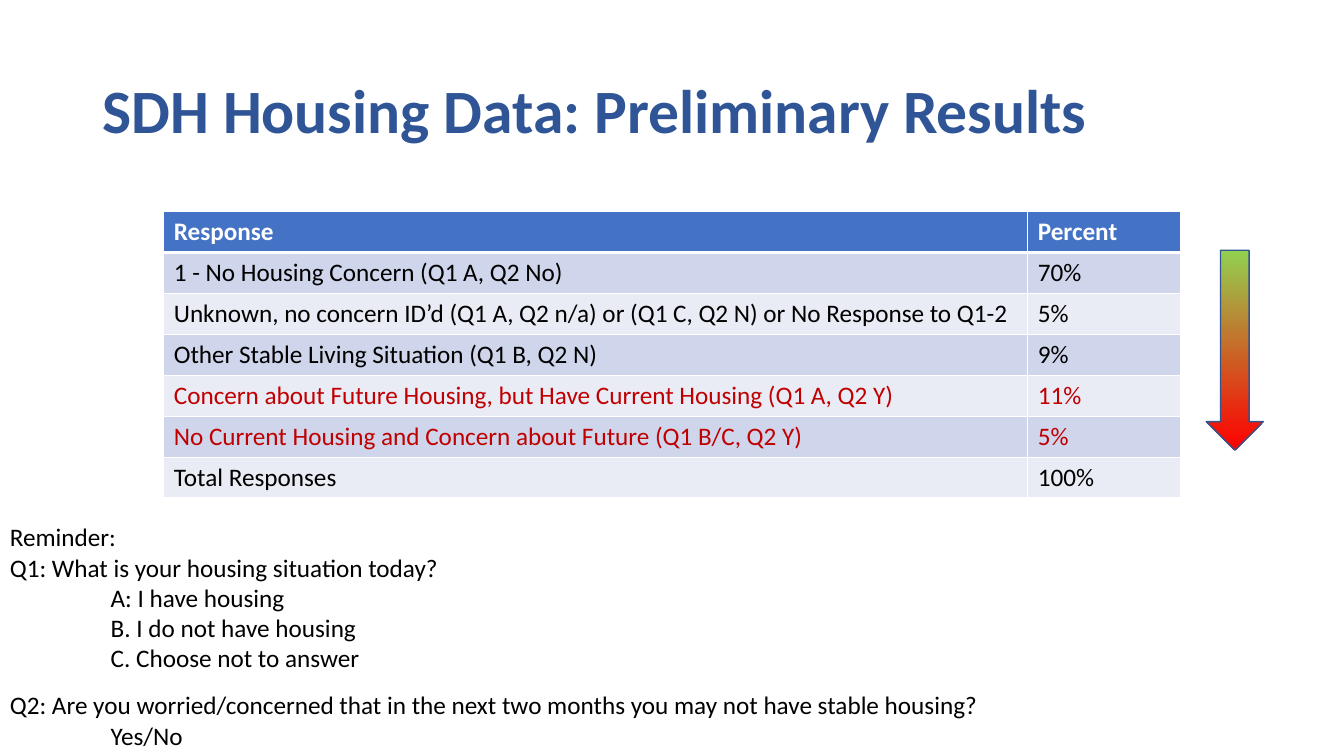
from lxml import etree
from pptx import Presentation
from pptx import util as u
from pptx.dml.color import RGBColor
from pptx.enum import shapes, text
from pptx.oxml import ns

RESPONSES = [
    ("Response", "Percent"),
    ("1 - No Housing Concern (Q1 A, Q2 No)", "70%"),
    ("Unknown, no concern ID’d (Q1 A, Q2 n/a) or (Q1 C, Q2 N) or No Response to Q1-2", "5%"),
    ("Other Stable Living Situation (Q1 B, Q2 N)", "9%"),
    ("Concern about Future Housing, but Have Current Housing (Q1 A, Q2 Y)", "11%"),
    ("No Current Housing and Concern about Future (Q1 B/C, Q2 Y)", "5%"),
    ("Total Responses", "100%"),
]
CONCERN_ROWS = (4, 5)
REMINDER = [
    ("Reminder:", 0, 0),
    ("Q1: What is your housing situation today?", 0, 0),
    ("A: I have housing", 1, 0),
    ("B. I do not have housing", 1, 0),
    ("C. Choose not to answer", 1, 12),
    ("Q2: Are you worried/concerned that in the next two months you may not have stable housing?", 0, 0),
    ("Yes/No", 1, 0),
]


def rgb(code):
    """Turn a hex string into a colour."""
    return RGBColor.from_string(code)


class HousingSlide:
    """Hold the style and the current slide, laid out on a 160 by 90 grid."""

    FONT = "Calibri"
    COLUMNS, ROWS = 160, 90
    INK, WHITE, ALERT = "000000", "FFFFFF", "C00000"
    HEADER, BANDS = "4472C4", ("E9EBF5", "CFD5EA")

    def __init__(self):
        self.deck = Presentation()
        self.deck.slide_width = u.Inches(13.333)
        self.deck.slide_height = u.Inches(7.5)
        self.slide = self.deck.slides.add_slide(self.deck.slide_layouts[5])

    def box(self, column, row, columns, rows):
        """Turn grid units into left, top, width and height."""
        across = self.deck.slide_width / self.COLUMNS
        down = self.deck.slide_height / self.ROWS
        return [int(n * unit) for n, unit in
                ((column, across), (row, down), (columns, across), (rows, down))]

    def assign(self, target, values):
        """Set each attribute from a dict of format values."""
        for key, value in values.items():
            setattr(target, key, value)

    def add_words(self, paragraph, words, color, size=18, bold=False):
        """Put one styled run in a paragraph."""
        run = paragraph.add_run()
        run.text = words
        self.assign(run.font, {"name": self.FONT, "size": u.Pt(size), "bold": bold})
        run.font.color.rgb = rgb(color)

    def title(self, words, *place):
        """Fill and move the title placeholder."""
        heading = self.slide.shapes.title
        self.assign(heading, dict(zip(("left", "top", "width", "height"), self.box(*place))))
        self.assign(heading.text_frame, {"vertical_anchor": text.MSO_ANCHOR.MIDDLE,
                                         "auto_size": text.MSO_AUTO_SIZE.NONE,
                                         "word_wrap": True})
        line = heading.text_frame.paragraphs[0]
        self.assign(line, {"alignment": text.PP_ALIGN.LEFT, "line_spacing": 0.9})
        self.add_words(line, words, "2F5597", 44, True)

    def borders(self, cell, widths):
        """Draw white left, right, top and bottom borders on a cell."""
        properties = cell._tc.get_or_add_tcPr()
        for place, (side, width) in enumerate(zip("LRTB", widths)):
            edge = etree.Element(ns.qn(f"a:ln{side}"), w=str(u.Pt(width)))
            fill = etree.SubElement(edge, ns.qn("a:solidFill"))
            etree.SubElement(fill, ns.qn("a:srgbClr"), val=self.WHITE)
            properties.insert(place, edge)

    def table(self, rows, alerts, shares, *place):
        """Add a banded table with a header row and highlighted rows."""
        bounds = self.box(*place)
        grid = self.slide.shapes.add_table(len(rows), len(shares), *bounds).table
        for column, share in zip(grid.columns, shares):
            column.width = int(bounds[2] * share)
        for r, answers in enumerate(rows):
            header = r == 0
            color = self.WHITE if header else self.ALERT if r in alerts else self.INK
            for c, words in enumerate(answers):
                cell = grid.cell(r, c)
                self.add_words(cell.text_frame.paragraphs[0], words, color, bold=header)
                cell.fill.solid()
                cell.fill.fore_color.rgb = rgb(self.HEADER if header else self.BANDS[r % 2])
                self.borders(cell, (1, 1, 3 if r == 1 else 1, 3 if header else 1))

    def outline(self, lines, *place):
        """Add text lines with an indent level and space after each."""
        frame = self.slide.shapes.add_textbox(*self.box(*place)).text_frame
        frame.word_wrap = True
        for i, (words, level, after) in enumerate(lines):
            line = frame.add_paragraph() if i else frame.paragraphs[0]
            line.space_after = u.Pt(after)
            line._p.get_or_add_pPr().set("marL", str(u.Inches(level)))
            self.add_words(line, words, self.INK)

    def severity_arrow(self, colors, *place):
        """Add a down arrow that shades from the first colour to the last."""
        arrow = self.slide.shapes.add_shape(shapes.MSO_SHAPE.DOWN_ARROW, *self.box(*place))
        arrow.shadow.inherit = False
        arrow.fill.gradient()
        arrow.fill.gradient_angle = 270
        for position, (stop, color) in enumerate(zip(arrow.fill.gradient_stops, colors)):
            stop.color.rgb = rgb(color)
            stop.position = position
        arrow.line.color.rgb = rgb("325491")
        arrow.line.width = u.Pt(1)


def main():
    """Build and save the slide."""
    page = HousingSlide()
    page.title("SDH Housing Data: Preliminary Results", 11, 4.8, 138, 17.4)
    page.table(RESPONSES, CONCERN_ROWS, (0.85, 0.15), 19.5, 25.2, 121, 34.1)
    page.outline(REMINDER, 0, 61.5, 124, 28.5)
    page.severity_arrow(("92D050", "FF0000"), 143.6, 29.8, 6.8, 23.8)
    page.deck.save("out.pptx")


if __name__ == "__main__":
    main()
